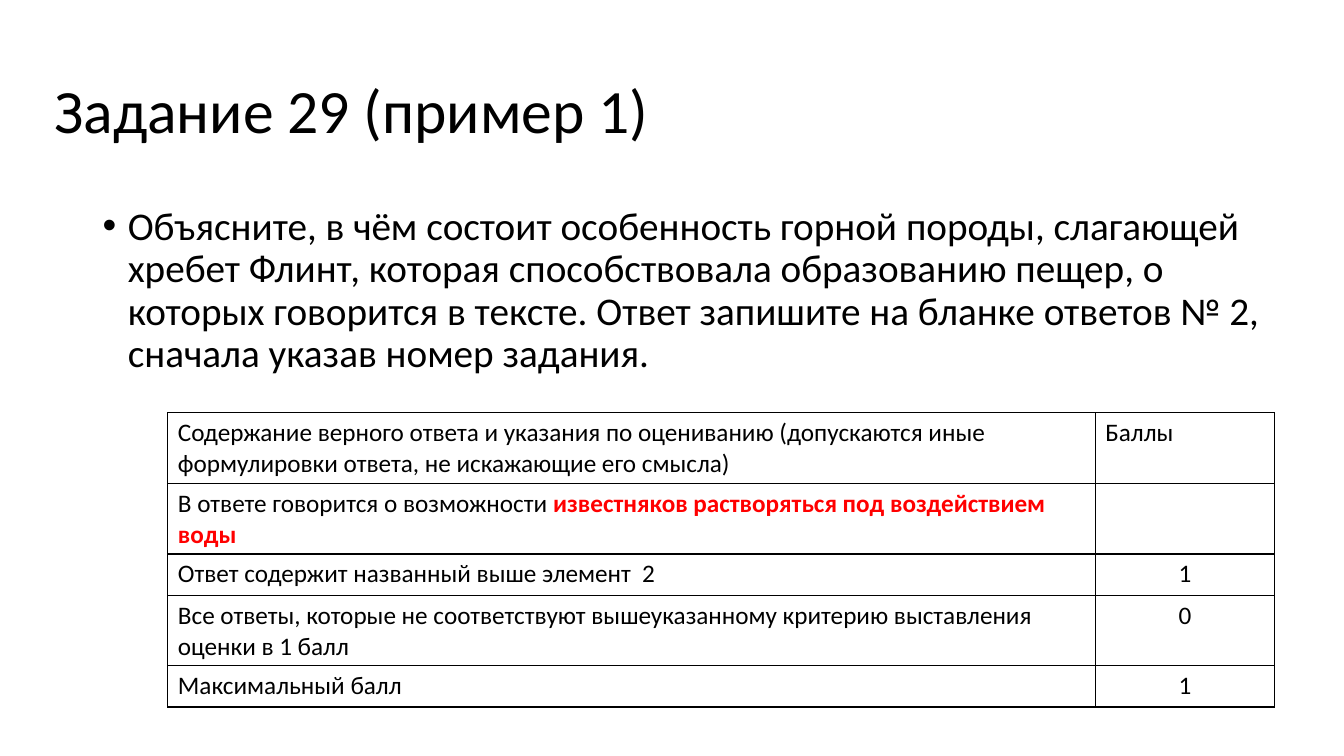
from dataclasses import dataclass
from lxml import etree
from pptx import Presentation
from pptx.dml.color import RGBColor
from pptx.enum import text
from pptx.oxml import ns
from pptx.util import Pt


@dataclass(frozen=True)
class Theme:
    font: str = "Calibri"
    ink: str = "000000"
    accent: str = "FF0000"
    paper: str = "FFFFFF"
    title: int = 44
    body: int = 28
    table: int = 18


theme = Theme()


def add_run(p, wording, size, color=theme.ink, bold=False):
    r = p.add_run()
    r.text = wording
    r.font.name = theme.font
    r.font.size = Pt(size)
    r.font.bold = bold
    r.font.color.rgb = RGBColor.from_string(color)


def add_borders(cell):
    tc_pr = cell._tc.get_or_add_tcPr()
    for i, side in enumerate(("lnL", "lnR", "lnT", "lnB")):
        ln = etree.Element(ns.qn(f"a:{side}"), w=str(Pt(1)))
        fill = etree.SubElement(ln, ns.qn("a:solidFill"))
        etree.SubElement(fill, ns.qn("a:srgbClr"), val=theme.ink)
        tc_pr.insert(i, ln)


prs = Presentation()
prs.slide_width, prs.slide_height = Pt(960), Pt(540)
s = prs.slides.add_slide(prs.slide_layouts[5])
s.background.fill.solid()
s.background.fill.fore_color.rgb = RGBColor.from_string(theme.paper)

title = s.shapes.title
title.left, title.top, title.width, title.height = Pt(31.7), Pt(28.8), Pt(828), Pt(104.4)
tf = title.text_frame
tf.auto_size = text.MSO_AUTO_SIZE.NONE
tf.vertical_anchor = text.MSO_ANCHOR.MIDDLE
p = tf.paragraphs[0]
p.alignment = text.PP_ALIGN.LEFT
p.line_spacing = 0.9
add_run(p, "Задание 29 (пример 1)", theme.title)

task = s.shapes.add_textbox(Pt(66.2), Pt(144), Pt(848.9), Pt(342.7))
tf = task.text_frame
tf.word_wrap = True
p = tf.paragraphs[0]
p.line_spacing = 0.9
p.space_before = Pt(10)
p_pr = p._p.get_or_add_pPr()
p_pr.set("marL", str(Pt(18)))
p_pr.set("indent", str(Pt(-18)))
etree.SubElement(p_pr, ns.qn("a:buFont"), typeface="Arial")
etree.SubElement(p_pr, ns.qn("a:buChar"), char="•")
add_run(
    p,
    "Объясните, в чём состоит особенность горной породы, слагающей хребет Флинт, "
    "которая способствовала образованию пещер, о которых говорится в тексте. "
    "Ответ запишите на бланке ответов № 2, сначала указав номер задания.",
    theme.body,
)

criteria = [
    ("Содержание верного ответа и указания по оцениванию "
     "(допускаются иные формулировки ответа, не искажающие его смысла)", "", "Баллы"),
    ("В ответе говорится о возможности ", "известняков растворяться под воздействием воды", ""),
    ("Ответ содержит названный выше элемент  2", "", "1"),
    ("Все ответы, которые не соответствуют вышеуказанному критерию "
     "выставления оценки в 1 балл", "", "0"),
    ("Максимальный балл", "", "1"),
]
widths = (662.4, 128.2)
row_height = 29.5
table = s.shapes.add_table(
    len(criteria), len(widths), Pt(119.9), Pt(294.8), Pt(sum(widths)), Pt(row_height * len(criteria))
).table
table.first_row = table.horz_banding = False
for column, width in zip(table.columns, widths):
    column.width = Pt(width)

for row, (criterion, key_answer, points) in enumerate(criteria):
    table.rows[row].height = Pt(row_height)
    answer_cell, points_cell = table.cell(row, 0), table.cell(row, 1)
    for cell in (answer_cell, points_cell):
        cell.fill.background()
        add_borders(cell)
    p = answer_cell.text_frame.paragraphs[0]
    add_run(p, criterion, theme.table)
    if key_answer:
        add_run(p, key_answer, theme.table, theme.accent, True)
    if points:
        p = points_cell.text_frame.paragraphs[0]
        p.alignment = text.PP_ALIGN.CENTER if row else text.PP_ALIGN.LEFT
        add_run(p, points, theme.table)

prs.save("out.pptx")
